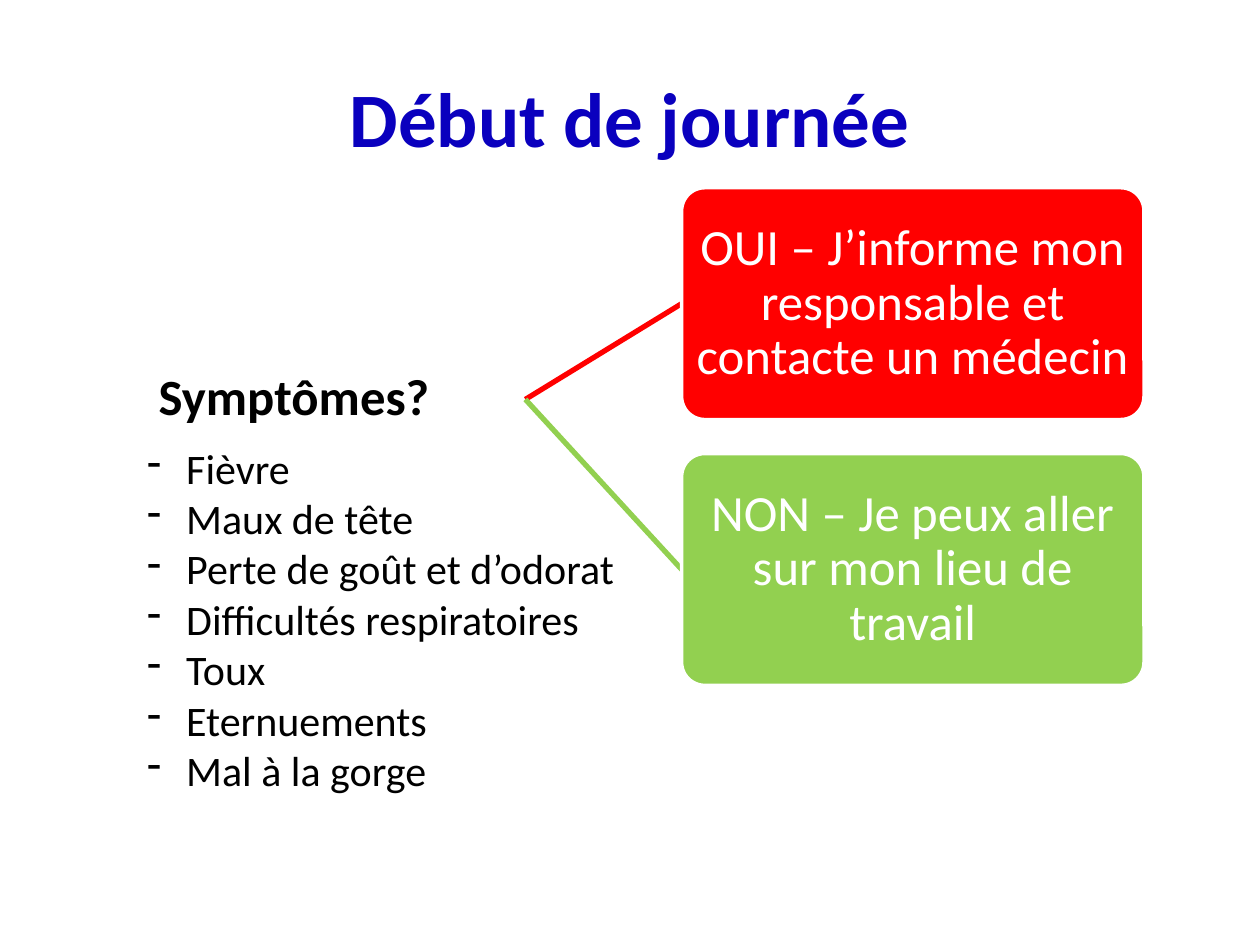
import pptx
import pptx.util
import pptx.dml.color
import pptx.enum.shapes
import pptx.enum.text
import pptx.oxml.ns
import lxml.etree

Inches = pptx.util.Inches
Pt = pptx.util.Pt
ALIGN = pptx.enum.text.PP_ALIGN
MIDDLE = pptx.enum.text.MSO_ANCHOR.MIDDLE

COLORS = {
    "white": "FFFFFF",
    "black": "000000",
    "blue": "0A00BE",
    "yes": "FF0000",
    "no": "92D050",
}
CARD_W, CARD_H = 3.67, 1.84
SIGNS = [
    "Fièvre",
    "Maux de tête",
    "Perte de goût et d’odorat",
    "Difficultés respiratoires",
    "Toux",
    "Eternuements",
    "Mal à la gorge",
]
# Answer cards: text, colour, top
CARDS = [
    ("OUI – J’informe mon responsable et contacte un médecin", "yes", 1.49),
    ("NON – Je peux aller sur mon lieu de travail", "no", 3.6),
]


def tint(name):
    return pptx.dml.color.RGBColor.from_string(COLORS[name])


def style(para, color, size, bold=False):
    form = {"name": "Calibri", "size": Pt(size), "bold": bold}
    for key, value in form.items():
        setattr(para.font, key, value)
    para.font.color.rgb = tint(color)


def add_card(slide, text, fill, left, top, ink="white", bold=False):
    card = slide.shapes.add_shape(
        pptx.enum.shapes.MSO_SHAPE.ROUNDED_RECTANGLE,
        Inches(left), Inches(top), Inches(CARD_W), Inches(CARD_H))
    card.adjustments[0] = 0.1
    card.shadow.inherit = False
    card.fill.solid()
    card.fill.fore_color.rgb = tint(fill)
    card.line.color.rgb = tint("white")
    card.line.width = Pt(2)
    frame = card.text_frame
    form = {"word_wrap": True, "vertical_anchor": MIDDLE}
    for side in ("left", "right", "top", "bottom"):
        form["margin_" + side] = Inches(0.02)
    for key, value in form.items():
        setattr(frame, key, value)
    para = frame.paragraphs[0]
    para.text = text
    para.alignment = ALIGN.CENTER
    para.line_spacing = 0.9
    style(para, ink, 29, bold)
    return card


def add_link(slide, color):
    link = slide.shapes.add_connector(
        pptx.enum.shapes.MSO_CONNECTOR.STRAIGHT, 0, 0, 0, 0)
    link.line.color.rgb = tint(color)
    link.line.width = Pt(3)
    props = link._element.spPr
    lxml.etree.SubElement(props, pptx.oxml.ns.qn("a:effectLst"))
    return link


def add_title(slide, text):
    box = slide.shapes.add_textbox(
        Inches(0.5), Inches(0.3), Inches(9), Inches(1.25))
    frame = box.text_frame
    frame.word_wrap = True
    frame.vertical_anchor = MIDDLE
    para = frame.paragraphs[0]
    para.text = text
    para.alignment = ALIGN.CENTER
    style(para, "blue", 44, True)


def add_list(slide, items):
    box = slide.shapes.add_textbox(
        Inches(1.07), Inches(3.46), Inches(3.94), Inches(3.23))
    frame = box.text_frame
    frame.word_wrap = False
    frame.auto_size = pptx.enum.text.MSO_AUTO_SIZE.SHAPE_TO_FIT_TEXT
    for num, item in enumerate(items):
        para = frame.add_paragraph() if num else frame.paragraphs[0]
        para.text = item
        props = para._p.get_or_add_pPr()
        props.set("marL", str(Inches(0.31)))
        props.set("indent", str(-Inches(0.31)))
        mark = lxml.etree.SubElement(props, pptx.oxml.ns.qn("a:buChar"))
        mark.set("char", "-")
        style(para, "black", 24)


def main():
    deck = pptx.Presentation()
    deck.slide_width, deck.slide_height = Inches(10), Inches(7.5)
    slide = deck.slides.add_slide(deck.slide_layouts[6])

    # Question and its two answers, each link behind its card
    root = add_card(slide, "Symptômes?", "white", 0.5, 2.25, "black", True)
    for text, color, top in CARDS:
        link = add_link(slide, color)
        card = add_card(slide, text, color, 5.41, top)
        link.begin_connect(root, 3)
        link.end_connect(card, 1)

    # Title and list of symptoms
    add_title(slide, "Début de journée")
    add_list(slide, SIGNS)
    deck.save("out.pptx")


if __name__ == "__main__":
    main()
